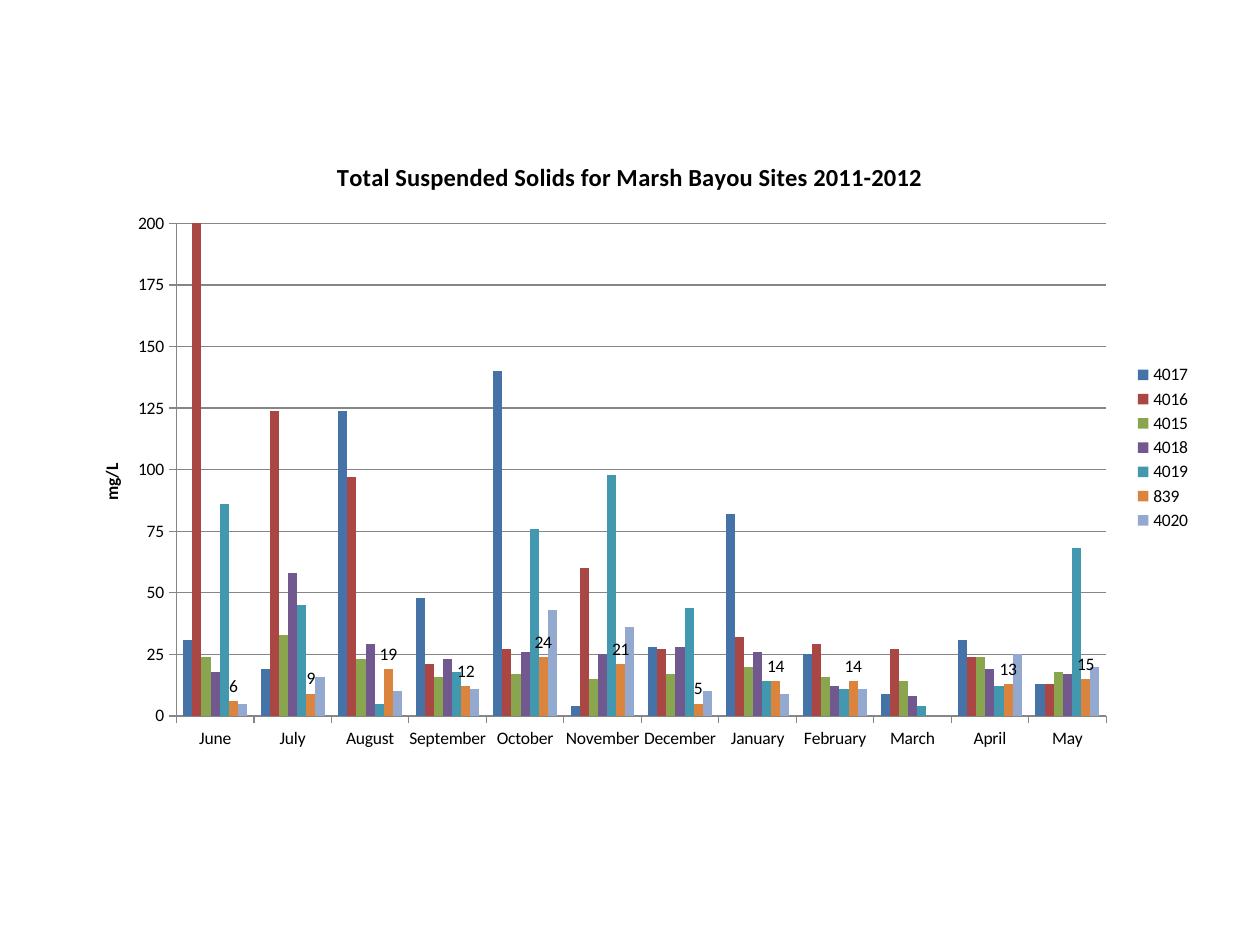
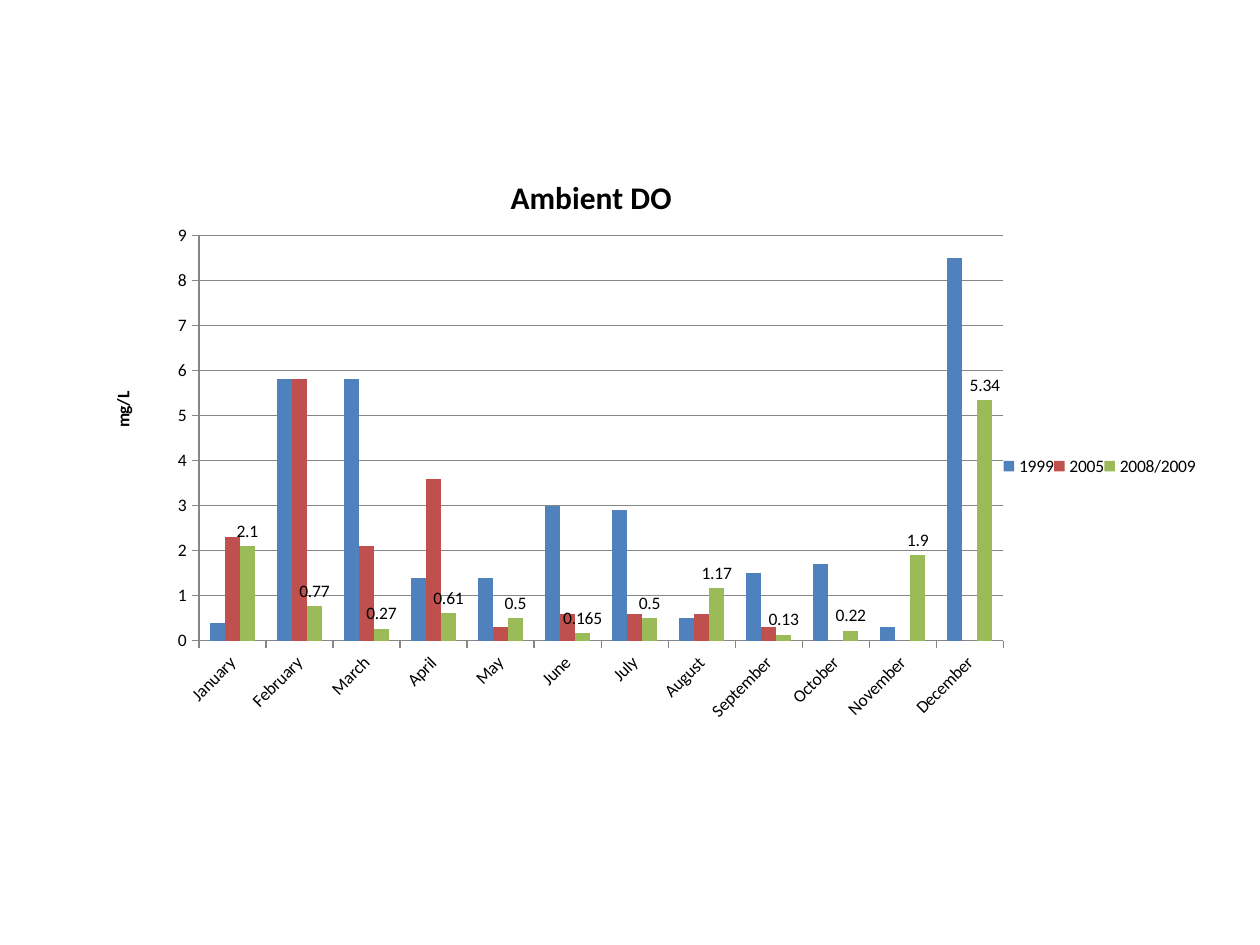
"""Build two slides of clustered column charts on bayou water quality."""
import dataclasses

import lxml.etree
import pptx
import pptx.chart.data
import pptx.dml.color
import pptx.enum.chart
import pptx.oxml.ns
import pptx.util

Inches = pptx.util.Inches
qn = pptx.oxml.ns.qn


@dataclasses.dataclass(frozen=True)
class Theme:
    """Hold the colours and type sizes of the deck."""
    font: str = "Calibri"
    ink: str = "000000"
    grid: str = "868686"
    bright: tuple = ("4F81BD", "C0504D", "9BBB59")
    muted: tuple = ("4572A7", "AA4643", "89A54E", "71588F", "4198AF", "DB843D", "93A9CF")
    body: int = 10
    title: int = 14
    large_title: int = 18


THEME = Theme()
MONTHS = ("January", "February", "March", "April", "May", "June", "July",
          "August", "September", "October", "November", "December")

SOLIDS = {
    "4017": (31, 19, 124, 48, 140, 4, 28, 82, 25, 9, 31, 13),
    "4016": (884, 124, 97, 21, 27, 60, 27, 32, 29, 27, 24, 13),
    "4015": (24, 33, 23, 16, 17, 15, 17, 20, 16, 14, 24, 18),
    "4018": (18, 58, 29, 23, 26, 25, 28, 26, 12, 8, 19, 17),
    "4019": (86, 45, 5, 18, 76, 98, 44, 14, 11, 4, 12, 68),
    "839": (6, 9, 19, 12, 24, 21, 5, 14, 14, None, 13, 15),
    "4020": (5, 16, 10, 11, 43, 36, 10, 9, 11, None, 25, 20),
}
OXYGEN = {
    "1999": (0.4, 5.8, 5.8, 1.4, 1.4, 3, 2.9, 0.5, 1.5, 1.7, 0.3, 8.5),
    "2005": (2.3, 5.8, 2.1, 3.6, 0.3, 0.6, 0.6, 0.6, 0.3, None, None, None),
    "2008/2009": (2.1, 0.77, 0.27, 0.61, 0.5, 0.165, 0.5, 1.17, 0.13, 0.22, 1.9, 5.34),
}


def rgb(value):
    """Return a colour object for a hex string."""
    return pptx.dml.color.RGBColor.from_string(value)


def style_font(font, size, bold=False):
    """Apply the deck typeface to a font."""
    font.name = THEME.font
    font.size = pptx.util.Pt(size)
    font.bold = bold
    font.color.rgb = rgb(THEME.ink)


def place(element, index, x, y, width=None, height=None, inner=False):
    """Give a chart part a manual layout in fractions of the chart."""
    for old in element.findall(qn("c:layout")):
        element.remove(old)
    layout = lxml.etree.Element(qn("c:layout"))
    manual = lxml.etree.SubElement(layout, qn("c:manualLayout"))
    settings = [("layoutTarget", "inner")] if inner else []
    settings += [("xMode", "edge"), ("yMode", "edge"),
                 ("x", x), ("y", y), ("w", width), ("h", height)]
    for tag, value in settings:
        if value is not None:
            lxml.etree.SubElement(manual, qn(f"c:{tag}")).set("val", str(value))
    element.insert(index, layout)


def rotate(element, degrees):
    """Turn the text of a chart part."""
    body = next(element.iter(qn("a:bodyPr")))
    body.set("rot", str(degrees * 60000))
    body.set("vert", "horz")


def write_title(title, text, size, position=None):
    """Write a bold title and optionally place it."""
    span = title.text_frame.paragraphs[0].add_run()
    span.text = text
    style_font(span.font, size, bold=True)
    if position:
        place(title._element, 1, *position)


def style_axis(axis):
    """Set the line, ticks and labels of an axis."""
    axis.format.line.color.rgb = rgb(THEME.grid)
    axis.major_tick_mark = pptx.enum.chart.XL_TICK_MARK.OUTSIDE
    axis.minor_tick_mark = pptx.enum.chart.XL_TICK_MARK.NONE
    style_font(axis.tick_labels.font, THEME.body)


def style_value_axis(axis, maximum, step, title_position):
    """Scale the value axis and add its gridlines and unit."""
    style_axis(axis)
    axis.minimum_scale, axis.maximum_scale, axis.major_unit = 0, maximum, step
    axis.tick_labels.number_format = "General"
    axis.tick_labels.number_format_is_linked = False
    axis.has_major_gridlines = True
    axis.major_gridlines.format.line.color.rgb = rgb(THEME.grid)
    axis.has_title = True
    write_title(axis.axis_title, "mg/L", THEME.body, title_position)
    rotate(axis.axis_title._element, -90)


def add_legend(chart, area):
    """Show the legend in the given area."""
    chart.has_legend = True
    legend = chart.legend
    legend.position = pptx.enum.chart.XL_LEGEND_POSITION.RIGHT
    legend.include_in_layout = False
    style_font(legend.font, THEME.body)
    place(legend._element, 1, *area)


def label_values(series):
    """Show each value above its column."""
    labels = series.data_labels
    labels.show_value = True
    labels.number_format = "General"
    labels.number_format_is_linked = False
    labels.position = pptx.enum.chart.XL_LABEL_POSITION.OUTSIDE_END
    style_font(labels.font, THEME.body)


def add_columns(page, top, months, readings, colours, labelled):
    """Add a clustered column chart with coloured series."""
    data = pptx.chart.data.CategoryChartData()
    data.categories = months
    for name, values in readings.items():
        data.add_series(name, values)
    frame = page.shapes.add_chart(
        pptx.enum.chart.XL_CHART_TYPE.COLUMN_CLUSTERED,
        Inches(0.5), Inches(top), Inches(9), Inches(4.95), data)
    chart = frame.chart
    style_font(chart.font, THEME.body)
    plot = chart.plots[0]
    plot.gap_width = 150
    plot.vary_by_categories = False
    for series, colour in zip(plot.series, colours):
        series.format.fill.solid()
        series.format.fill.fore_color.rgb = rgb(colour)
        series.invert_if_negative = False
        if series.name == labelled:
            label_values(series)
    style_axis(chart.category_axis)
    chart.has_title = True
    return chart


def place_plot(chart, area):
    """Place the inner plot area."""
    plot_area = next(chart._chartSpace.iter(qn("c:plotArea")))
    place(plot_area, 0, *area, inner=True)


def add_solids_page(deck):
    """Add the suspended solids slide."""
    page = deck.slides.add_slide(deck.slide_layouts[6])
    chart = add_columns(page, 1.08, MONTHS[5:] + MONTHS[:5], SOLIDS, THEME.muted, "839")
    write_title(chart.chart_title, "Total Suspended Solids for Marsh Bayou Sites 2011-2012",
                THEME.title)
    style_value_axis(chart.value_axis, 200, 25, (0.03, 0.52))
    add_legend(chart, (0.94, 0.36, 0.06, 0.28))
    place_plot(chart, (0.1, 0.14, 0.82, 0.79))


def add_oxygen_page(deck):
    """Add the dissolved oxygen slide."""
    page = deck.slides.add_slide(deck.slide_layouts[6])
    chart = add_columns(page, 1.25, MONTHS, OXYGEN, THEME.bright, "2008/2009")
    write_title(chart.chart_title, "Ambient DO", THEME.large_title, (0.39, 0.02))
    style_value_axis(chart.value_axis, 9, 1, (0.04, 0.37))
    rotate(chart.category_axis._element.find(qn("c:txPr")), -45)
    add_legend(chart, (0.83, 0.47, 0.17, 0.05))
    place_plot(chart, (0.12, 0.125, 0.71, 0.65))


def main():
    """Build and save the deck."""
    deck = pptx.Presentation()
    deck.slide_width, deck.slide_height = Inches(10), Inches(7.5)
    add_solids_page(deck)
    add_oxygen_page(deck)
    deck.save("out.pptx")


if __name__ == "__main__":
    main()
